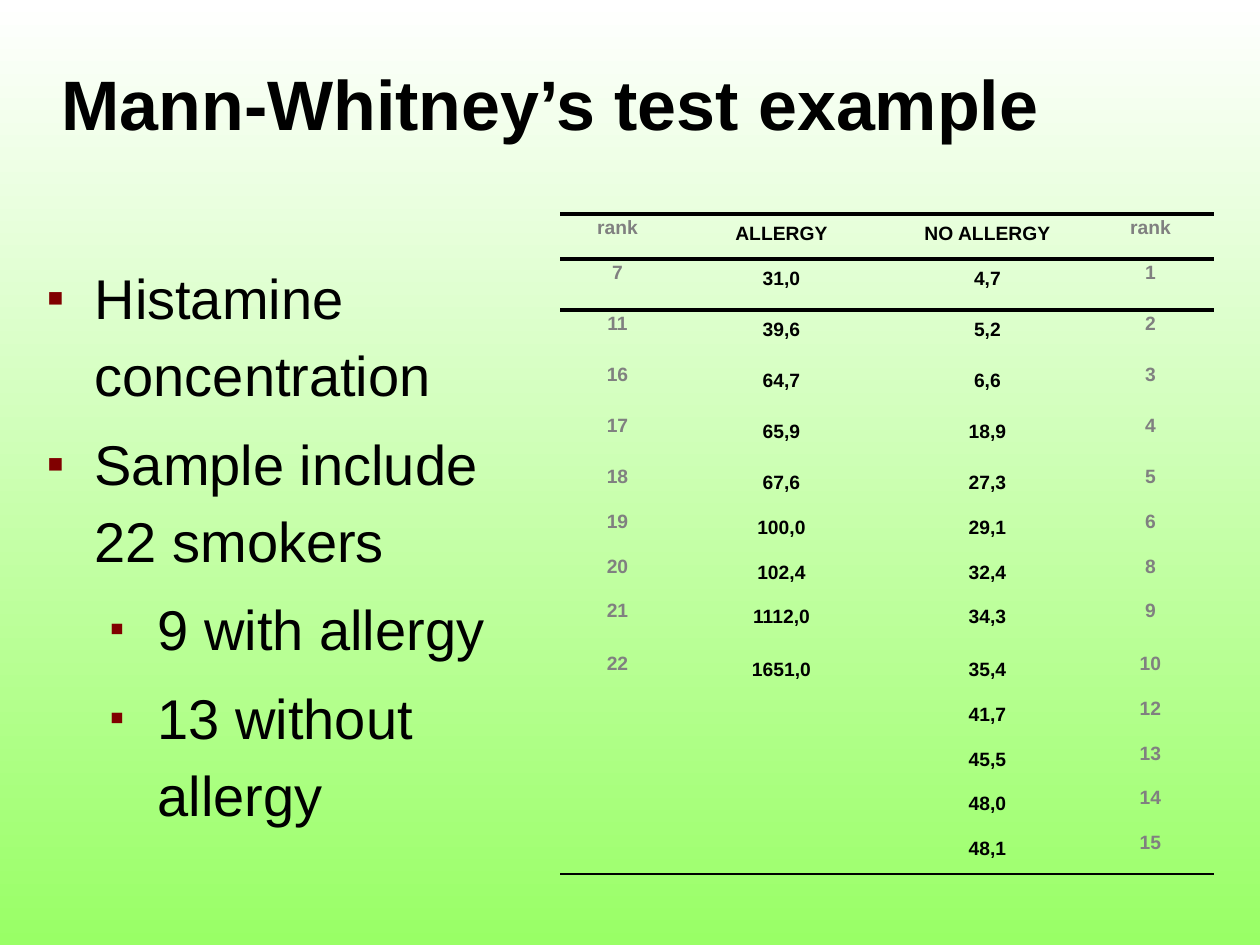
from itertools import zip_longest

from lxml import etree
from pptx import Presentation
from pptx import util as u
from pptx.dml.color import RGBColor
from pptx.enum import text
from pptx.oxml.ns import qn

PX = u.Inches(1) / 126
FONT = "Arial"
COLORS = {"ink": "000000", "rank": "808080", "bullet": "800000",
          "top": "FFFFFF", "bottom": "99FF66"}

BULLETS = [("Histamine concentration", 0), ("Sample include 22 smokers", 0),
           ("9 with allergy", 1), ("13 without allergy", 1)]
LEVELS = [{"indent": 48, "size": 90}, {"indent": 111, "size": 75}]
HANGING = 48

HEADER = ("rank", "ALLERGY", "NO ALLERGY", "rank")
ALLERGY = [("7", "31,0"), ("11", "39,6"), ("16", "64,7"), ("17", "65,9"),
           ("18", "67,6"), ("19", "100,0"), ("20", "102,4"),
           ("21", "1112,0"), ("22", "1651,0")]
NO_ALLERGY = [("4,7", "1"), ("5,2", "2"), ("6,6", "3"), ("18,9", "4"),
              ("27,3", "5"), ("29,1", "6"), ("32,4", "8"), ("34,3", "9"),
              ("35,4", "10"), ("41,7", "12"), ("45,5", "13"),
              ("48,0", "14"), ("48,1", "15")]
COLUMN_WIDTHS = [115, 213, 199, 127]
ROW_HEIGHTS = [45] + [51] * 4 + [45, 45, 44, 53, 45, 45, 44, 45, 45]
RANK_COLUMNS = (0, 3)
NO_STYLE_NO_GRID = "{2D5ABB26-0587-4C30-8999-92F81FD0307C}"


def px(length):
    return u.Emu(round(length * PX))


def color(name):
    return RGBColor.from_string(COLORS[name])


def place(shape, box):
    shape.left, shape.top, shape.width, shape.height = map(px, box)


def format_runs(para, size, name="ink", bold=False):
    for span in para.runs:
        span.font.name = FONT
        span.font.size = u.Pt(size)
        span.font.bold = bold
        span.font.color.rgb = color(name)


def add_background(page):
    fill = page.background.fill
    fill.gradient()
    fill.gradient_angle = 270
    for stop, name in zip(fill.gradient_stops, ("top", "bottom")):
        stop.color.rgb = color(name)


def add_title(page, box):
    title = page.shapes.title
    place(title, box)
    frame = title.text_frame
    frame.text = "Mann-Whitney’s test example"
    frame.vertical_anchor = text.MSO_ANCHOR.MIDDLE
    frame.auto_size = text.MSO_AUTO_SIZE.NONE
    para = frame.paragraphs[0]
    para.alignment = text.PP_ALIGN.LEFT
    para.line_spacing = 0.7
    format_runs(para, 40, bold=True)


def set_bullet(para, indent, size):
    properties = para._p.get_or_add_pPr()
    properties.set("marL", str(px(indent)))
    properties.set("indent", str(-px(HANGING)))
    tint = etree.SubElement(properties, qn("a:buClr"))
    etree.SubElement(tint, qn("a:srgbClr"), val=COLORS["bullet"])
    etree.SubElement(properties, qn("a:buSzPct"), val=str(size * 1000))
    etree.SubElement(properties, qn("a:buFont"), typeface=FONT)
    etree.SubElement(properties, qn("a:buChar"), char="▪")


def add_bullets(page, box):
    body = page.placeholders[1]
    place(body, box)
    frame = body.text_frame
    frame.text = "\n".join(line for line, _ in BULLETS)
    frame.auto_size = text.MSO_AUTO_SIZE.NONE
    for para, (_, level) in zip(frame.paragraphs, BULLETS):
        para.level = level
        para.line_spacing = 1.15
        para.space_before = u.Pt(6.4)
        set_bullet(para, **LEVELS[level])
        format_runs(para, 32)


def set_border(cell, side, width):
    """Draw one side (T or B) of a cell, width in points."""
    line = etree.SubElement(cell._tc.get_or_add_tcPr(), qn(f"a:ln{side}"),
                            w=str(u.Pt(width)))
    fill = etree.SubElement(line, qn("a:solidFill"))
    etree.SubElement(fill, qn("a:srgbClr"), val=COLORS["ink"])


def fill_cell(cell, value, is_rank):
    across, down = (0, 0) if is_rank else (13, 6)
    cell.margin_left = cell.margin_right = px(across)
    cell.margin_top = cell.margin_bottom = px(down)
    cell.fill.background()
    cell.text_frame.text = value
    para = cell.text_frame.paragraphs[0]
    para.alignment = text.PP_ALIGN.CENTER
    para.line_spacing = 1.15
    format_runs(para, 11, "rank" if is_rank else "ink", bold=True)
    if not value:  # keeps an empty cell from stretching its row
        etree.SubElement(para._p, qn("a:endParaRPr"), sz="1100")


def add_rank_table(page, box):
    pairs = zip_longest(ALLERGY, NO_ALLERGY, fillvalue=("", ""))
    rows = [HEADER] + [left + right for left, right in pairs]
    table = page.shapes.add_table(len(rows), len(HEADER), *map(px, box)).table
    table.first_row = table.horz_banding = False
    table._tbl.tblPr.find(qn("a:tableStyleId")).text = NO_STYLE_NO_GRID
    for column, width in zip(table.columns, COLUMN_WIDTHS):
        column.width = px(width)
    for row, height in zip(table.rows, ROW_HEIGHTS):
        row.height = px(height)

    borders = {0: [("T", 2.25), ("B", 2.25)], 1: [("T", 2.25)],
               len(rows) - 1: [("B", 1)]}
    for r, values in enumerate(rows):
        for c, value in enumerate(values):
            cell = table.cell(r, c)
            for side, width in borders.get(r, []):
                set_border(cell, side, width)
            fill_cell(cell, value, c in RANK_COLUMNS)


def main():
    deck = Presentation()
    deck.slide_width, deck.slide_height = px(1260), px(945)
    page = deck.slides.add_slide(deck.slide_layouts[1])
    add_background(page)
    add_title(page, (49, 37, 1149, 152))
    add_bullets(page, (34, 247, 473, 572))
    add_rank_table(page, (560, 214, sum(COLUMN_WIDTHS), sum(ROW_HEIGHTS)))
    deck.save("out.pptx")


if __name__ == "__main__":
    main()
